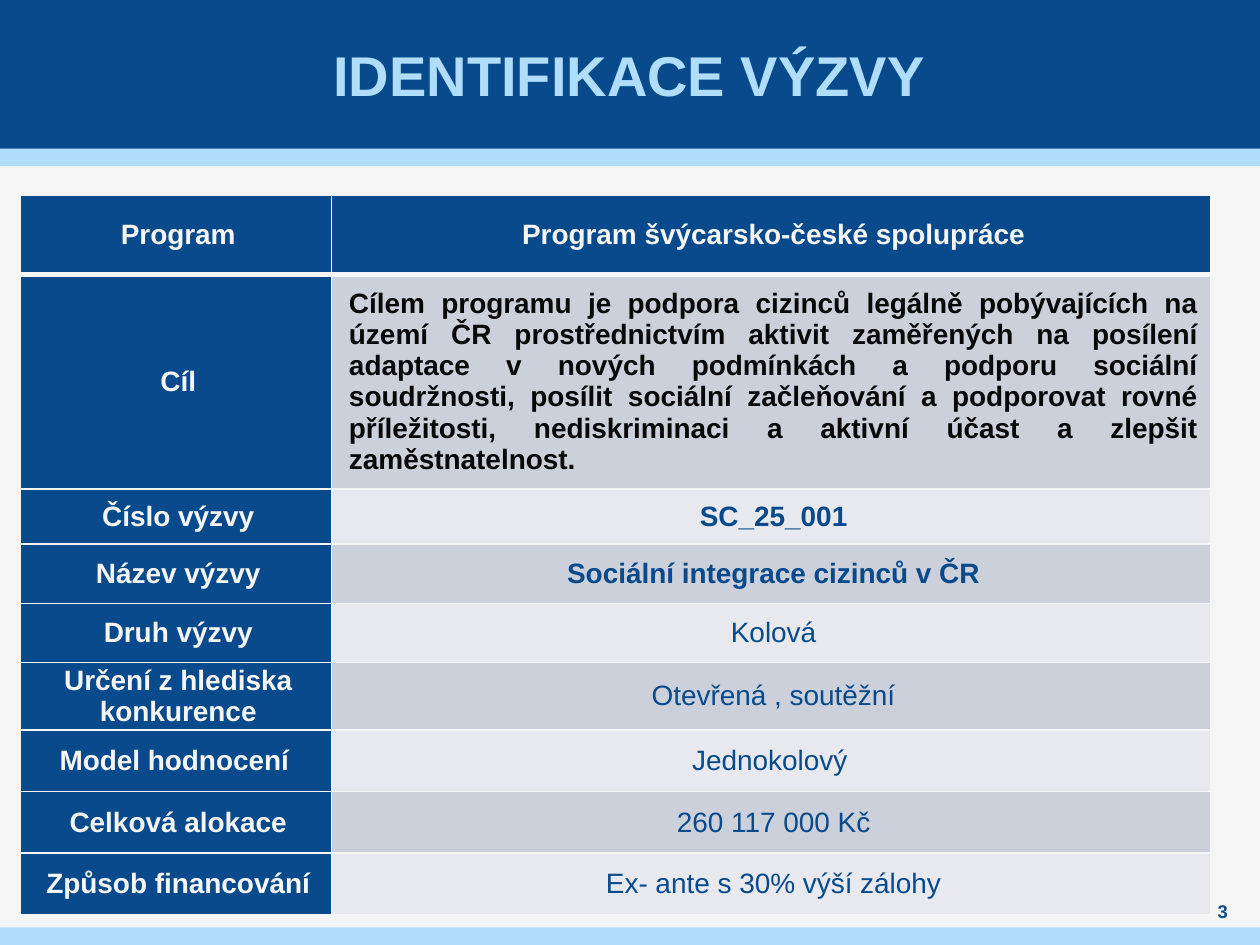
"""Build the slide that identifies the grant call in a two-column table."""
from dataclasses import dataclass

from lxml import etree
from pptx import Presentation
from pptx.dml.color import RGBColor
from pptx.enum import shapes, text
from pptx.oxml import ns
from pptx.util import Inches, Pt

NAVY = RGBColor(0x08, 0x4A, 0x8B)
SKY = RGBColor(0xAF, 0xDD, 0xFA)
PAPER = RGBColor(0xF5, 0xF5, 0xF5)
INK = RGBColor(0x08, 0x08, 0x08)
BAND_DARK = RGBColor(0xCC, 0xD0, 0xDA)
BAND_LIGHT = RGBColor(0xE7, 0xE9, 0xEE)

FONT = "Arial"
COLUMN_WIDTHS = (2.47, 6.98)


@dataclass(frozen=True)
class Band:
    top: float
    height: float
    color: RGBColor


@dataclass(frozen=True)
class Label:
    wording: str
    left: float
    top: float
    width: float
    height: float
    size: float
    color: RGBColor
    side_inset: float = 0


@dataclass(frozen=True)
class Entry:
    term: str
    detail: str
    height: float = 0.49
    color: RGBColor = NAVY
    bold: bool = False
    justified: bool = False


BANDS = (Band(1.18, 0.14, SKY), Band(0, 1.18, NAVY), Band(7.36, 0.14, SKY))

TITLE = Label("IDENTIFIKACE VÝZVY", 0.39, 0, 9.21, 1.18, 32, SKY, 0.04)
PAGE_NUMBER = Label("3", 9.45, 7.13, 0.51, 0.2, 10.5, NAVY)

GOAL = (
    "Cílem programu je podpora cizinců legálně pobývajících na území ČR "
    "prostřednictvím aktivit zaměřených na posílení adaptace v nových podmínkách "
    "a podporu sociální soudržnosti, posílit sociální začleňování a podporovat "
    "rovné příležitosti, nediskriminaci a aktivní účast a zlepšit zaměstnatelnost."
)

ENTRIES = (
    Entry("Program", "Program švýcarsko-české spolupráce", 0.63, PAPER, True),
    Entry("Cíl", GOAL, 1.58, INK, True, True),
    Entry("Číslo výzvy", "SC_25_001", 0.44, bold=True),
    Entry("Název výzvy", "Sociální integrace cizinců v ČR", 0.47, bold=True),
    Entry("Druh výzvy", "Kolová", 0.47),
    Entry("Určení z hlediska konkurence", "Otevřená , soutěžní"),
    Entry("Model hodnocení ", "Jednokolový "),
    Entry("Celková alokace", "260 117 000 Kč"),
    Entry("Způsob financování", "Ex- ante s 30% výší zálohy"),
)


def style_font(paragraph, size: float, color: RGBColor, bold: bool) -> None:
    paragraph.font.name = FONT
    paragraph.font.size = Pt(size)
    paragraph.font.bold = bold
    paragraph.font.color.rgb = color


def draw_band(slide, band: Band) -> None:
    bar = slide.shapes.add_shape(
        shapes.MSO_SHAPE.RECTANGLE, 0, Inches(band.top), Inches(10), Inches(band.height)
    )
    bar.shadow.inherit = False
    bar.fill.solid()
    bar.fill.fore_color.rgb = band.color
    bar.line.fill.background()


def draw_label(slide, label: Label) -> None:
    box = slide.shapes.add_textbox(
        Inches(label.left), Inches(label.top), Inches(label.width), Inches(label.height)
    )
    frame = box.text_frame
    frame.word_wrap = True
    frame.vertical_anchor = text.MSO_ANCHOR.MIDDLE
    frame.margin_left = frame.margin_right = Inches(label.side_inset)
    frame.margin_top = frame.margin_bottom = 0
    paragraph = frame.paragraphs[0]
    paragraph.text = label.wording
    paragraph.alignment = text.PP_ALIGN.CENTER
    style_font(paragraph, label.size, label.color, True)


def draw_borders(cell, top: float, bottom: float) -> None:
    properties = cell._tc.get_or_add_tcPr()
    for side, width in (("L", 1), ("R", 1), ("T", top), ("B", bottom)):
        edge = etree.SubElement(properties, ns.qn(f"a:ln{side}"), w=str(Pt(width)))
        paint = etree.SubElement(edge, ns.qn("a:solidFill"))
        etree.SubElement(paint, ns.qn("a:srgbClr"), val=str(PAPER))


def fill_cell(
    cell, wording: str, fill: RGBColor, color: RGBColor, bold: bool, justified: bool = False
) -> None:
    cell.fill.solid()
    cell.fill.fore_color.rgb = fill
    cell.vertical_anchor = text.MSO_ANCHOR.MIDDLE
    cell.margin_left = cell.margin_right = Inches(0.1 if justified else 0)
    cell.margin_top = cell.margin_bottom = Inches(0.05 if justified else 0)
    paragraph = cell.text_frame.paragraphs[0]
    paragraph.text = wording
    paragraph.alignment = text.PP_ALIGN.JUSTIFY if justified else text.PP_ALIGN.CENTER
    paragraph.space_before = paragraph.space_after = Pt(3)
    paragraph._p.get_or_add_pPr().set("marL", str(Inches(0.04)))
    style_font(paragraph, 16, color, bold)


def draw_table(slide, entries: tuple[Entry, ...]) -> None:
    table = slide.shapes.add_table(
        len(entries), len(COLUMN_WIDTHS), Inches(0.16), Inches(1.55),
        Inches(sum(COLUMN_WIDTHS)), Inches(sum(entry.height for entry in entries)),
    ).table
    for column, width in zip(table.columns, COLUMN_WIDTHS):
        column.width = Inches(width)
    for index, entry in enumerate(entries):
        row = table.rows[index]
        row.height = Inches(entry.height)
        term, detail = row.cells
        for cell in (term, detail):
            draw_borders(cell, 3 if index == 1 else 1, 3 if index == 0 else 1)
        band = BAND_DARK if index % 2 else BAND_LIGHT
        fill_cell(term, entry.term, NAVY, PAPER, True)
        fill_cell(
            detail, entry.detail, band if index else NAVY,
            entry.color, entry.bold, entry.justified,
        )


def main() -> None:
    presentation = Presentation()
    presentation.slide_width = Inches(10)
    presentation.slide_height = Inches(7.5)
    slide = presentation.slides.add_slide(presentation.slide_layouts[6])
    slide.background.fill.solid()
    slide.background.fill.fore_color.rgb = PAPER
    for band in BANDS:
        draw_band(slide, band)
    draw_label(slide, TITLE)
    draw_table(slide, ENTRIES)
    draw_label(slide, PAGE_NUMBER)
    presentation.save("out.pptx")


if __name__ == "__main__":
    main()
